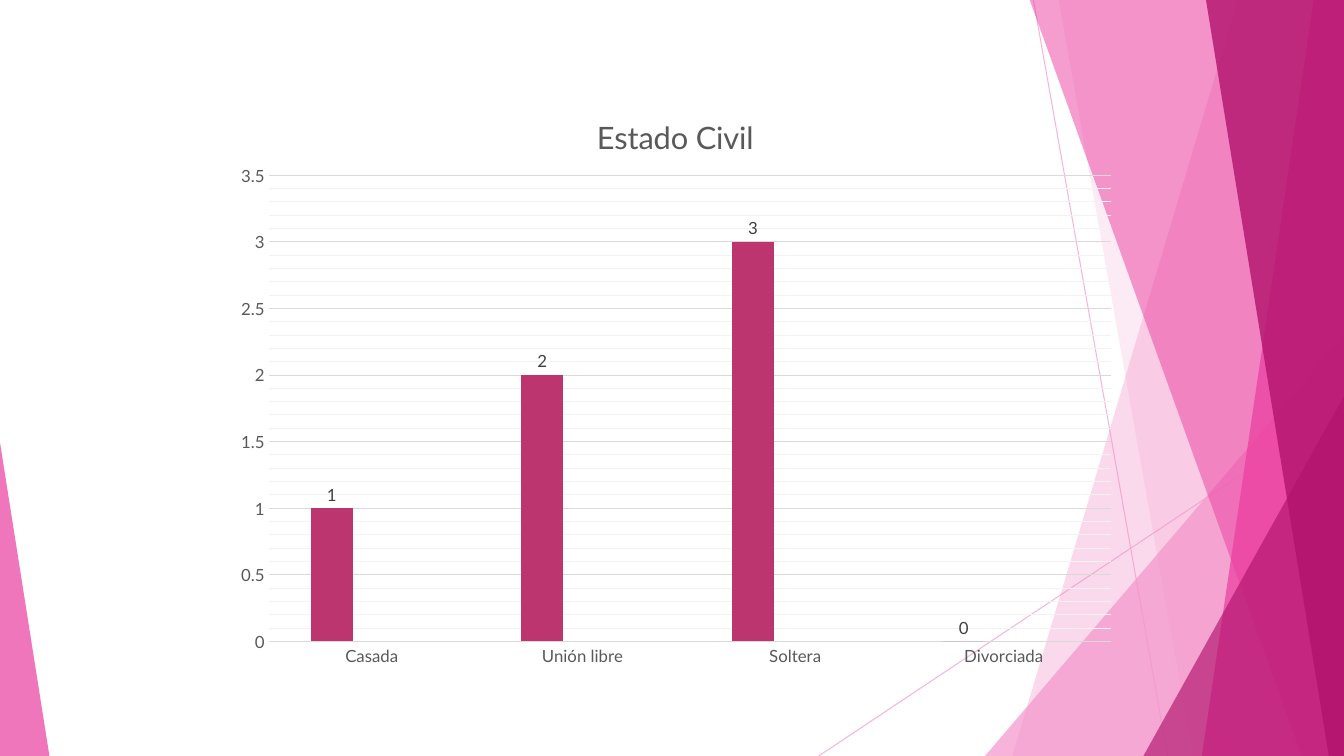
from lxml import etree
from pptx import Presentation
from pptx import util as u
from pptx.chart.data import CategoryChartData
from pptx.dml.color import RGBColor
from pptx.enum import chart as ch, shapes
from pptx.oxml import parse_xml
from pptx.oxml.ns import nsdecls, qn

COLORS = {
    "light": "F496CB", "pink": "EB3D9F", "magenta": "B2136D",
    "bar": "BC356F", "orange": "F27E19", "violet": "BC80E0",
    "text": "595959", "label": "404040", "grid": "D9D9D9", "minor": "F2F2F2",
}
FONT = "Lato"
WIDTH, HEIGHT = 13.33, 7.5
BLEED = -0.01


def rgb(name):
    return RGBColor.from_string(COLORS[name])


def set_alpha(filled, percent):
    """Make the solid colour inside a fill or line see-through."""
    color = next(filled.iter(qn("a:srgbClr")))
    etree.SubElement(color, qn("a:alpha")).set("val", str(percent * 1000))


def paint(facet, color, alpha):
    facet.shadow.inherit = False
    facet.fill.solid()
    facet.fill.fore_color.rgb = rgb(color)
    facet.line.fill.background()
    set_alpha(facet._element.spPr, alpha)


def add_ray(slide, start, end):
    ends = [u.Inches(v) for v in (*start, *end)]
    ray = slide.shapes.add_connector(shapes.MSO_CONNECTOR.STRAIGHT, *ends)
    ray.line.color.rgb = rgb("light")
    ray.line.width = u.Pt(0.75)
    properties = ray._element.spPr
    set_alpha(properties, 70)
    etree.SubElement(properties, qn("a:effectLst"))


def add_band(slide, top_x, bottom_x, color, alpha):
    """A band from a slanted left side to the right slide edge."""
    outline = slide.shapes.build_freeform(
        u.Inches(top_x), u.Inches(BLEED), scale=1.0)
    corners = [(WIDTH, BLEED), (WIDTH, HEIGHT), (bottom_x, HEIGHT)]
    outline.add_line_segments(
        [(u.Inches(x), u.Inches(y)) for x, y in corners], close=True)
    paint(outline.convert_to_shape(), color, alpha)


def add_corner(slide, left, top, width, apex, color, alpha):
    """A triangle that stands on the bottom edge of the slide."""
    corner = slide.shapes.add_shape(
        shapes.MSO_SHAPE.ISOSCELES_TRIANGLE, u.Inches(left), u.Inches(top),
        u.Inches(width), u.Inches(HEIGHT - top))
    corner.adjustments[0] = apex
    paint(corner, color, alpha)


def add_backdrop(slide):
    add_ray(slide, (10.25, 0), (11.58, HEIGHT))
    add_ray(slide, (WIDTH, 4.03), (8.12, HEIGHT))
    add_band(slide, 12.28, 10.04, "light", 36)
    add_band(slide, 10.5, 11.83, "light", 20)
    add_corner(slide, 9.77, 3.33, 3.56, 1, "light", 72)
    add_band(slide, 10.21, 12.91, "pink", 50)
    add_band(slide, 13.03, 11.92, "pink", 70)
    add_band(slide, 11.96, 13.18, "magenta", 80)
    add_corner(slide, 11.34, 3.93, 1.99, 1, "magenta", 66)
    add_corner(slide, 0, 4.39, 0.49, 0, "pink", 70)


def set_font(font, size, color):
    font.name = FONT
    font.size = u.Pt(size)
    font.bold = False
    font.color.rgb = rgb(color)


def place(part, after, **fractions):
    """Fix a chart part at fractions of the chart area."""
    for old in part.findall(qn("c:layout")):
        part.remove(old)
    target = '<c:layoutTarget val="inner"/>' if "w" in fractions else ""
    modes = "".join(f'<c:{k}Mode val="edge"/>' for k in "xy")
    values = "".join(f'<c:{k} val="{v}"/>' for k, v in fractions.items())
    layout = parse_xml(
        f'<c:layout {nsdecls("c")}><c:manualLayout>{target}{modes}{values}'
        '</c:manualLayout></c:layout>')
    part.insert(0 if after is None else part.index(after) + 1, layout)


def style_axes(chart):
    for axis in (chart.category_axis, chart.value_axis):
        axis.major_tick_mark = axis.minor_tick_mark = ch.XL_TICK_MARK.NONE
        set_font(axis.tick_labels.font, 12, "text")
    status_line = chart.category_axis.format.line
    status_line.color.rgb = rgb("grid")
    status_line.width = u.Pt(0.75)

    count = chart.value_axis
    count.minimum_scale, count.maximum_scale = 0, 3.5
    count.major_unit, count.minor_unit = 0.5, 0.1
    count.tick_labels.number_format = "General"
    count.tick_labels.number_format_is_linked = False
    count.format.line.fill.background()
    count.major_gridlines.format.line.color.rgb = rgb("grid")
    count.major_gridlines.format.line.width = u.Pt(0.75)
    count.has_minor_gridlines = True
    count._element.find(qn("c:minorGridlines")).append(parse_xml(
        f'<c:spPr {nsdecls("c", "a")}><a:ln w="{u.Pt(0.75)}"><a:solidFill>'
        f'<a:srgbClr val="{COLORS["minor"]}"/></a:solidFill></a:ln></c:spPr>'))


def add_status_chart(slide, left, top, width, height):
    data = CategoryChartData()
    data.categories = ["Casada ", "Unión libre ", "Soltera", "Divorciada "]
    data.add_series("Series 1", [1, 2, 3, 0])
    for name in ("Series 2", "Series 3"):
        data.add_series(name, [None] * 4)
    chart = slide.shapes.add_chart(
        ch.XL_CHART_TYPE.COLUMN_CLUSTERED, u.Inches(left), u.Inches(top),
        u.Inches(width), u.Inches(height), data).chart
    set_font(chart.font, 10, "text")
    chart.has_legend = False

    title = chart.chart_title
    heading = title.text_frame.paragraphs[0].add_run()
    heading.text = "Estado Civil "
    set_font(heading.font, 22, "text")
    title.include_in_layout = False
    title_part = title._element
    place(title_part, title_part.find(qn("c:tx")), x=0.41, y=0.05)
    plot_area = chart._chartSpace.chart.plotArea
    place(plot_area, None, x=0.05, y=0.16, w=0.94, h=0.78)

    plot = chart.plots[0]
    plot.gap_width, plot.overlap = 199, 0
    plot.vary_by_categories = False
    for series, color in zip(plot.series, ("bar", "orange", "violet")):
        series.format.fill.solid()
        series.format.fill.fore_color.rgb = rgb(color)
        labels = series.data_labels
        labels.show_value = True
        labels.position = ch.XL_LABEL_POSITION.OUTSIDE_END
        set_font(labels.font, 12, "label")
    style_axes(chart)


def main():
    deck = Presentation()
    deck.slide_width, deck.slide_height = u.Inches(WIDTH), u.Inches(HEIGHT)
    slide = deck.slides.add_slide(deck.slide_layouts[6])
    add_backdrop(slide)
    add_status_chart(slide, 2.22, 0.79, 8.89, 5.93)
    deck.save("out.pptx")


if __name__ == "__main__":
    main()
